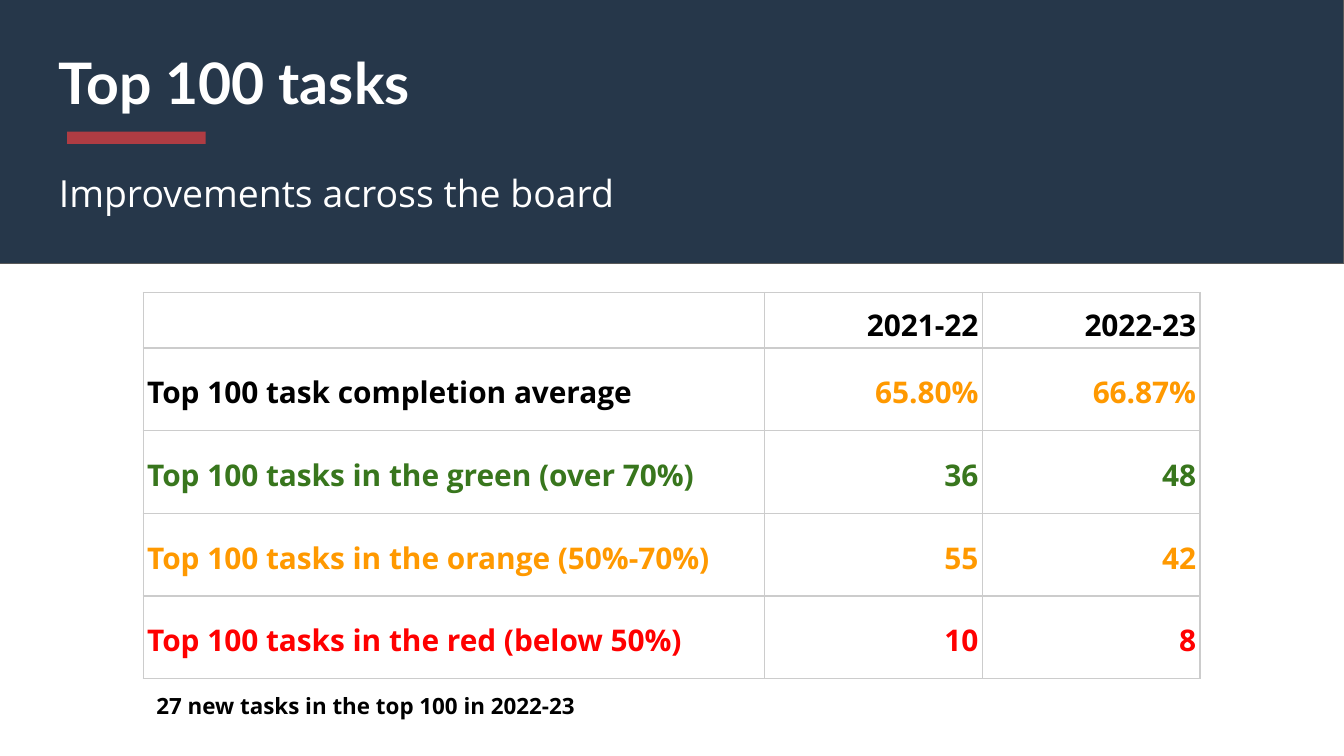
from lxml.etree import SubElement
from pptx import Presentation
from pptx.dml.color import RGBColor
from pptx.enum.shapes import MSO_SHAPE as Shape
from pptx.enum.text import MSO_ANCHOR as Anchor, PP_ALIGN as Align
from pptx.oxml import parse_xml
from pptx.oxml.ns import nsdecls
from pptx.util import Emu, Pt

EMU_PER_PX = 4572  # 200 px to the inch
HEADING_FONT, BODY_FONT = "Lato", "Open Sans"
NAVY, RED_BAR, OUTLINE, GRID = "26374A", "AF3C43", "595959", "CCCCCC"
WHITE, BLACK, GREEN, ORANGE, RED = "FFFFFF", "000000", "38761D", "FF9900", "FF0000"

COLUMN_WIDTHS = [925, 324, 324]
HEADER_HEIGHT, ROW_HEIGHT = 83, 123
# Each row: label, label colour, values, value colour
ROWS = [
    ("", BLACK, ["2021-22", "2022-23"], BLACK),
    ("Top 100 task completion average", BLACK, ["65.80%", "66.87%"], ORANGE),
    ("Top 100 tasks in the green (over 70%)", GREEN, ["36", "48"], GREEN),
    ("Top 100 tasks in the orange (50%-70%)", ORANGE, ["55", "42"], ORANGE),
    ("Top 100 tasks in the red (below 50%)", RED, ["10", "8"], RED),
]


def px(length):
    return Emu(length * EMU_PER_PX)


def color(hex_string):
    return RGBColor.from_string(hex_string)


def add_run(paragraph, text, size, font_name, hex_string, bold=False):
    run = paragraph.add_run()
    run.text = text
    run.font.size = Pt(size)
    run.font.name = font_name
    run.font.bold = bold
    run.font.color.rgb = color(hex_string)


def set_margins(target, horizontal, vertical):
    target.margin_left = target.margin_right = px(horizontal)
    target.margin_top = target.margin_bottom = px(vertical)


def add_rectangle(slide, left, top, width, height, fill, line=None):
    shape = slide.shapes.add_shape(
        Shape.RECTANGLE, px(left), px(top), px(width), px(height))
    shape.shadow.inherit = False
    shape.fill.solid()
    shape.fill.fore_color.rgb = color(fill)
    if line:
        shape.line.color.rgb = color(line)
        shape.line.width = Pt(0.75)
    else:
        shape.line.fill.background()


def add_text(slide, left, top, width, height, text, *style):
    box = slide.shapes.add_textbox(px(left), px(top), px(width), px(height))
    frame = box.text_frame
    frame.word_wrap = True
    set_margins(frame, 20, 20)
    add_run(frame.paragraphs[0], text, *style)


def add_header(slide, left, top, width, height):
    add_rectangle(slide, left, top, width, height, NAVY, OUTLINE)
    add_text(slide, left + 78, top + 52, 1534, 210,
             "Top 100 tasks", 30.6, HEADING_FONT, WHITE, True)
    add_rectangle(slide, left + 110, top + 198, 206, 18, RED_BAR)
    add_text(slide, left + 78, top + 236, 1542, 100,
             "Improvements across the board", 20, BODY_FONT, WHITE)


def set_borders(cell):
    properties = cell._tc.get_or_add_tcPr()
    for position, side in enumerate(("lnL", "lnR", "lnT", "lnB")):
        border = parse_xml(f'<a:{side} {nsdecls("a")} w="{Pt(0.75)}"/>')
        namespace = border.nsmap["a"]
        fill = SubElement(border, f"{{{namespace}}}solidFill")
        SubElement(fill, f"{{{namespace}}}srgbClr", val=GRID)
        properties.insert(position, border)


def fill_cell(cell, text, hex_string, align, anchor):
    cell.fill.background()
    set_borders(cell)
    set_margins(cell, 6, 4)
    cell.vertical_anchor = anchor
    paragraph = cell.text_frame.paragraphs[0]
    paragraph.alignment = align
    paragraph.line_spacing = 1.15
    if text:
        add_run(paragraph, text, 16, BODY_FONT, hex_string, True)


def add_results(slide, left, top):
    """Place the results table with its footnote below."""
    heights = [HEADER_HEIGHT] + [ROW_HEIGHT] * (len(ROWS) - 1)
    table = slide.shapes.add_table(
        len(ROWS), len(COLUMN_WIDTHS), px(left), px(top),
        px(sum(COLUMN_WIDTHS)), px(sum(heights))).table
    table.first_row = table.horz_banding = False
    for column, width in zip(table.columns, COLUMN_WIDTHS):
        column.width = px(width)
    for index, (label, label_color, values, value_color) in enumerate(ROWS):
        table.rows[index].height = px(heights[index])
        anchor = Anchor.MIDDLE if index else Anchor.BOTTOM
        fill_cell(table.cell(index, 0), label, label_color, Align.LEFT, anchor)
        for column, value in enumerate(values, 1):
            fill_cell(table.cell(index, column), value, value_color,
                      Align.RIGHT, anchor)
    add_text(slide, left, top + sum(heights), 1038, 80,
             "27 new tasks in the top 100 in 2022-23", 12, BODY_FONT, BLACK, True)


def main():
    presentation = Presentation()
    presentation.slide_width = px(2000)
    presentation.slide_height = px(1125)
    slide = presentation.slides.add_slide(presentation.slide_layouts[6])
    add_header(slide, -10, -2, 2010, 394)
    add_results(slide, 213, 435)
    presentation.save("out.pptx")


if __name__ == "__main__":
    main()
